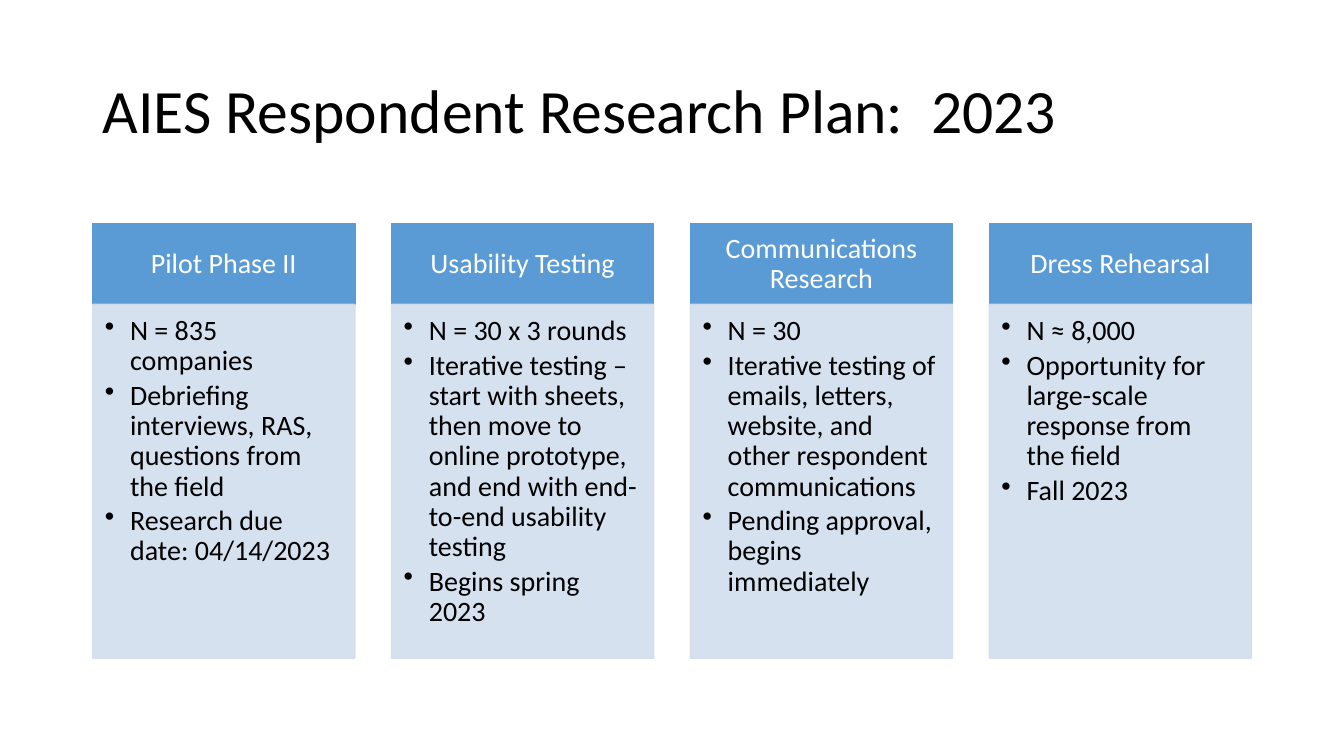
from lxml import etree
from pptx import Presentation
from pptx.dml.color import RGBColor
from pptx.enum.shapes import MSO_SHAPE
from pptx.enum.text import MSO_ANCHOR, PP_ALIGN
from pptx.oxml.ns import qn
from pptx.util import Inches, Pt

RECTANGLE = MSO_SHAPE.RECTANGLE
TOP, MIDDLE = MSO_ANCHOR.TOP, MSO_ANCHOR.MIDDLE
LEFT, CENTER = PP_ALIGN.LEFT, PP_ALIGN.CENTER

FONT = "Calibri"
COLORS = {
    "text": "000000",
    "header": "5B9BD5",
    "header_text": "FFFFFF",
    "panel": "D2DEEF",
}

PHASES = [
    ("Pilot Phase II", [
        "N = 835 companies",
        "Debriefing interviews, RAS, questions from the field",
        "Research due date: 04/14/2023",
    ]),
    ("Usability Testing", [
        "N = 30 x 3 rounds",
        "Iterative testing – start with sheets, then move to online prototype, "
        "and end with end-to-end usability testing",
        "Begins spring 2023",
    ]),
    ("Communications Research", [
        "N = 30",
        "Iterative testing of emails, letters, website, and other respondent communications",
        "Pending approval, begins immediately",
    ]),
    ("Dress Rehearsal", [
        "N ≈ 8,000",
        "Opportunity for large-scale response from the field",
        "Fall 2023",
    ]),
]


def write_text(box, lines, size, color, align, anchor, margins, space_after=0, bullet=False):
    frame = box.text_frame
    frame.word_wrap = True
    frame.vertical_anchor = anchor
    (frame.margin_left, frame.margin_top,
     frame.margin_right, frame.margin_bottom) = [Inches(margin) for margin in margins]
    frame.text = "\n".join(lines)
    for paragraph in frame.paragraphs:
        paragraph.alignment = align
        paragraph.line_spacing = 0.9
        paragraph.space_after = Pt(space_after)
        if bullet:
            properties = paragraph._p.get_or_add_pPr()
            properties.set("marL", str(Inches(0.25)))
            properties.set("indent", str(-Inches(0.25)))
            etree.SubElement(properties, qn("a:buChar"), char="•")
        for span in paragraph.runs:
            span.font.name = FONT
            span.font.size = Pt(size)
            span.font.color.rgb = RGBColor.from_string(COLORS[color])


def add_block(page, left, top, width, height, color):
    block = page.shapes.add_shape(
        RECTANGLE, Inches(left), Inches(top), Inches(width), Inches(height))
    block.shadow.inherit = False
    block.fill.solid()
    block.fill.fore_color.rgb = RGBColor.from_string(COLORS[color])
    block.line.color.rgb = RGBColor.from_string(COLORS[color])
    block.line.width = Pt(1)
    return block


deck = Presentation()
deck.slide_width, deck.slide_height = Inches(13.33), Inches(7.5)
page = deck.slides.add_slide(deck.slide_layouts[6])

# Title
title = page.shapes.add_textbox(Inches(0.92), Inches(0.4), Inches(11.5), Inches(1.45))
write_text(title, ["AIES Respondent Research Plan:  2023"], 44, "text",
           LEFT, MIDDLE, (0.1, 0.05, 0.1, 0.05))

# One column per research phase: header above a bulleted panel
column_left, column_step, column_width = 0.92, 2.964, 2.6
header_top, header_height, panel_height = 2.22, 0.8, 3.51

for index, (phase, points) in enumerate(PHASES):
    left = column_left + index * column_step

    header = add_block(page, left, header_top, column_width, header_height, "header")
    write_text(header, [phase], 20, "header_text", CENTER, MIDDLE,
               (0.16, 0.09, 0.16, 0.09))

    panel = add_block(page, left, header_top + header_height,
                      column_width, panel_height, "panel")
    write_text(panel, points, 20, "text", LEFT, TOP,
               (0.12, 0.12, 0.16, 0.17), space_after=3, bullet=True)

    # Panel fill and outline are 90% opaque
    for color_element in panel._element.spPr.iter(qn("a:srgbClr")):
        etree.SubElement(color_element, qn("a:alpha"), val="90000")

deck.save("out.pptx")
